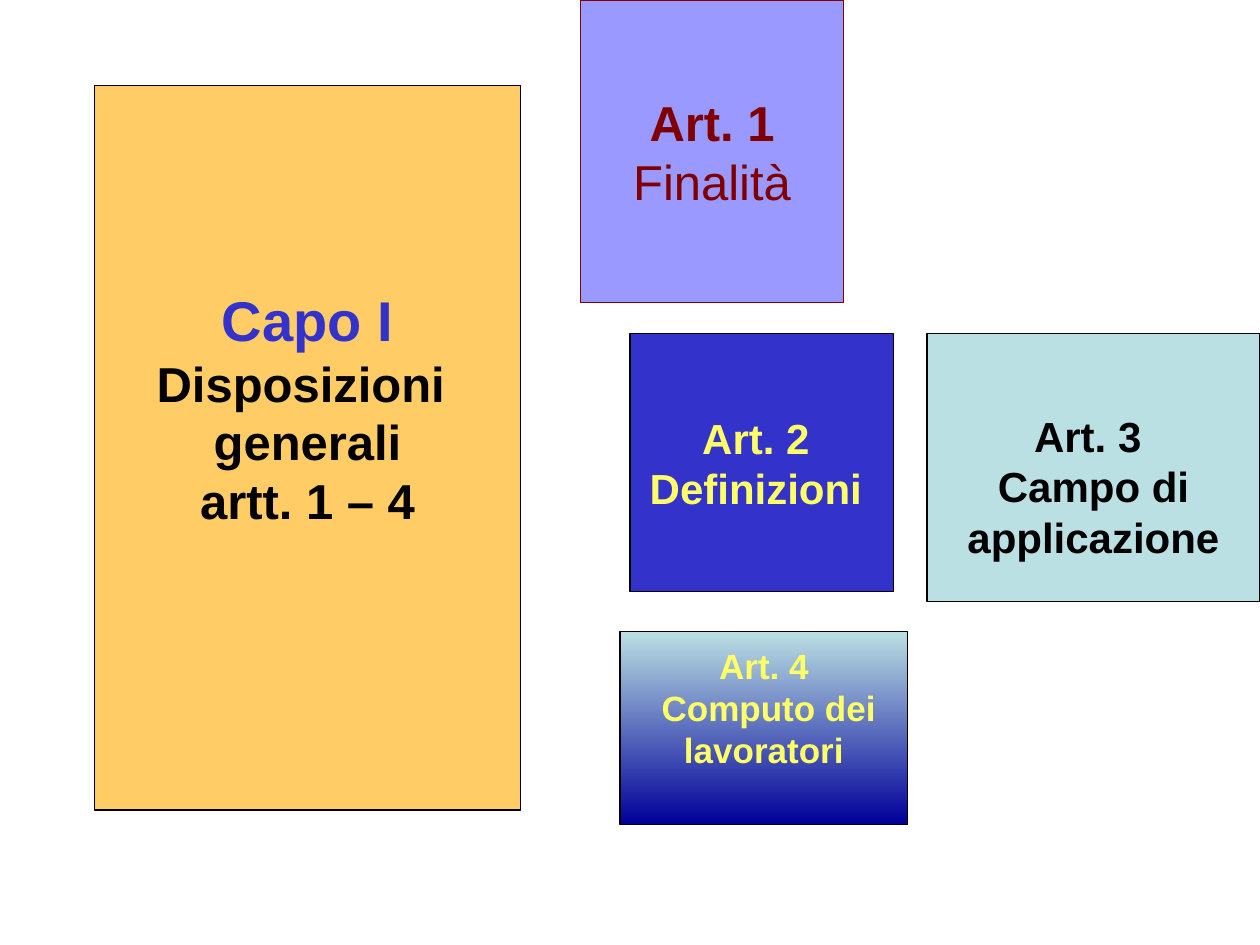
import dataclasses
import typing

import pptx
import pptx.dml.color
import pptx.enum.shapes
import pptx.enum.text
import pptx.slide
import pptx.util

Cm = pptx.util.Cm
Pt = pptx.util.Pt


@dataclasses.dataclass(frozen=True)
class Theme:
    font: str = "Arial"
    black: str = "000000"
    blue: str = "3333CC"
    navy: str = "000099"
    lilac: str = "9999FF"
    maroon: str = "800000"
    orange: str = "FFCC66"
    aqua: str = "BBE0E3"
    yellow: str = "FFFF66"
    title: int = 32
    large: int = 28
    mid: int = 24
    small: int = 20
    edge: float = 0.75


THEME = Theme()


class Line(typing.NamedTuple):
    text: str
    size: int
    ink: str
    bold: bool = True


@dataclasses.dataclass(frozen=True)
class Card:
    left: float
    top: float
    width: float
    height: float
    fills: tuple[str, ...]
    lines: list[Line]
    edge: str = THEME.black
    pad_top: float = 0.13
    pad_base: float = 0.13


def same(size: int, ink: str, *texts: str) -> list[Line]:
    return [Line(text, size, ink) for text in texts]


def rgb(code: str) -> pptx.dml.color.RGBColor:
    return pptx.dml.color.RGBColor.from_string(code)


def paint(shape: typing.Any, fills: tuple[str, ...]) -> None:
    if len(fills) == 1:
        shape.fill.solid()
        shape.fill.fore_color.rgb = rgb(fills[0])
        return
    shape.fill.gradient()
    shape.fill.gradient_angle = 270
    for stop, code in zip(shape.fill.gradient_stops, fills):
        stop.color.rgb = rgb(code)


def write(frame: typing.Any, lines: list[Line]) -> None:
    frame.text = "\n".join(line.text for line in lines)
    for para, line in zip(frame.paragraphs, lines):
        para.alignment = pptx.enum.text.PP_ALIGN.CENTER
        for run in para.runs:
            run.font.name = THEME.font
            run.font.size = Pt(line.size)
            run.font.bold = line.bold
            run.font.color.rgb = rgb(line.ink)


def draw(slide: pptx.slide.Slide, card: Card) -> None:
    shape = slide.shapes.add_shape(
        pptx.enum.shapes.MSO_SHAPE.RECTANGLE,
        Cm(card.left), Cm(card.top), Cm(card.width), Cm(card.height),
    )
    shape.shadow.inherit = False
    paint(shape, card.fills)
    shape.line.color.rgb = rgb(card.edge)
    shape.line.width = Pt(THEME.edge)
    frame = shape.text_frame
    frame.word_wrap = False
    frame.vertical_anchor = pptx.enum.text.MSO_ANCHOR.MIDDLE
    frame.margin_top = Cm(card.pad_top)
    frame.margin_bottom = Cm(card.pad_base)
    write(frame, card.lines)


CARDS = [
    Card(1.9, 1.73, 8.6, 14.6, (THEME.orange,),
         [Line("Capo I", THEME.title, THEME.blue),
          *same(THEME.large, THEME.black,
                "Disposizioni ", "generali", "artt. 1 – 4")],
         pad_base=1.75),
    Card(12.7, 6.73, 5.31, 5.2, (THEME.blue,),
         same(THEME.mid, THEME.yellow, "Art. 2 ", "Definizioni ")),
    Card(18.69, 6.73, 6.71, 5.4, (THEME.aqua,),
         same(THEME.mid, THEME.black,
              "Art. 3 ", "Campo di", " applicazione "),
         pad_top=0.86),
    Card(12.5, 12.73, 5.8, 3.89, (THEME.aqua, THEME.navy),
         same(THEME.small, THEME.yellow,
              "Art. 4", " Computo dei", " lavoratori "),
         pad_base=0.94),
    Card(11.7, 0, 5.31, 6.1, (THEME.lilac,),
         [Line("Art. 1", THEME.large, THEME.maroon),
          Line(" Finalità ", THEME.large, THEME.maroon, False)],
         edge=THEME.maroon),
]


def main() -> None:
    deck = pptx.Presentation()
    deck.slide_width = Cm(25.4)
    deck.slide_height = Cm(19.05)
    slide = deck.slides.add_slide(deck.slide_layouts[6])
    for card in CARDS:
        draw(slide, card)
    deck.save("out.pptx")


if __name__ == "__main__":
    main()
